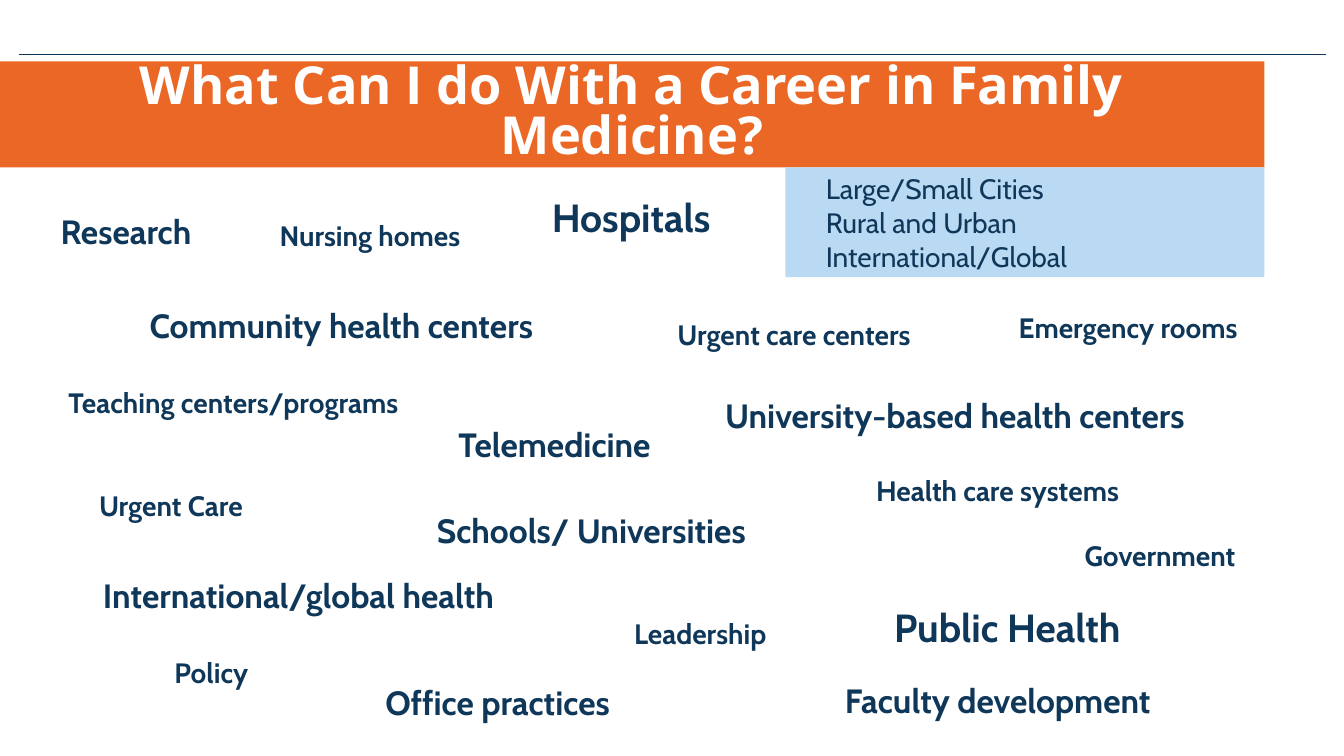
import dataclasses

import pptx
import pptx.dml.color
import pptx.enum.shapes
import pptx.enum.text
import pptx.oxml.xmlchemy
import pptx.slide
import pptx.util
from lxml import etree

PX = 9144
COLORS = {"navy": "0F3759", "orange": "EA6725", "sky": "BAD9F3", "white": "FFFFFF"}
ALIGN = pptx.enum.text.PP_ALIGN
DRAWING_NS = "http://schemas.openxmlformats.org/drawingml/2006/main"


@dataclasses.dataclass
class Label:
    text: str
    left: int
    top: int
    width: int
    height: int
    size: int
    spacing: float = 1.0


@dataclasses.dataclass
class Panel:
    text: str
    left: int
    top: int
    width: int
    height: int
    fill: str
    font: str
    size: float
    color: str
    bold: bool
    align: ALIGN
    spacing: float
    inset: int


LABELS = [
    Label("Community health centers", 103, 294, 471, 52, 24, 1.1),
    Label("Urgent care centers", 628, 307, 319, 45, 20, 1.1),
    Label("University-based health centers", 675, 383, 544, 52, 24, 1.1),
    Label("Faculty development", 787, 670, 405, 50, 24),
    Label("Public Health", 828, 589, 342, 61, 28, 1.1),
    Label("Nursing homes", 244, 209, 246, 45, 20, 1.1),
    Label("Policy", 37, 645, 345, 44, 20),
    Label("Office practices", 320, 672, 347, 50, 24),
    Label("Urgent Care", 40, 476, 259, 45, 20, 1.1),
    Label("Government", 969, 529, 363, 44, 20),
    Label("International/global health", 49, 565, 494, 50, 24),
    Label("Telemedicine", 405, 416, 290, 50, 24),
    Label("Emergency rooms", 969, 303, 300, 44, 20),
    Label("Research", 37, 204, 176, 50, 24),
    Label("Schools/ Universities", 405, 501, 363, 50, 24),
    Label("Health care systems", 833, 465, 313, 44, 20),
    Label("Teaching centers/programs", 19, 378, 425, 44, 20),
    Label("Leadership", 587, 607, 215, 44, 20),
    Label("Hospitals", 476, 187, 300, 57, 28),
]

PANELS = [
    Panel("What Can I do With a Career in Family Medicine?", 0, 61, 1254, 105,
          "orange", "Open Sans", 37.4, "white", True, ALIGN.CENTER, 0.8, 10),
    Panel("Large/Small Cities\nRural and Urban\nInternational/Global", 779, 166, 475, 109,
          "sky", "Cabin", 20, "navy", False, ALIGN.LEFT, 1.0, 40),
]


def rgb(name: str) -> pptx.dml.color.RGBColor:
    return pptx.dml.color.RGBColor.from_string(COLORS[name])


def write(tf: pptx.text.text.TextFrame, text: str, font: str, size: float,
          color: str, bold: bool, align: ALIGN, spacing: float) -> None:
    tf.text = text
    tf.word_wrap = True
    for p in tf.paragraphs:
        p.alignment = align
        p.line_spacing = spacing
        for r in p.runs:
            r.font.name = font
            r.font.size = pptx.util.Pt(size)
            r.font.bold = bold
            r.font.color.rgb = rgb(color)


def add_label(s: pptx.slide.Slide, label: Label) -> None:
    sp = s.shapes.add_textbox(label.left * PX, label.top * PX,
                              label.width * PX, label.height * PX)
    tf = sp.text_frame
    write(tf, label.text, "Cabin", label.size, "navy", True, ALIGN.CENTER, label.spacing)
    tf.auto_size = pptx.enum.text.MSO_AUTO_SIZE.SHAPE_TO_FIT_TEXT


def add_panel(s: pptx.slide.Slide, panel: Panel) -> None:
    sp = s.shapes.add_shape(pptx.enum.shapes.MSO_SHAPE.RECTANGLE, panel.left * PX,
                            panel.top * PX, panel.width * PX, panel.height * PX)
    sp.shadow.inherit = False
    sp.fill.solid()
    sp.fill.fore_color.rgb = rgb(panel.fill)
    sp.line.fill.background()
    tf = sp.text_frame
    write(tf, panel.text, panel.font, panel.size, panel.color, panel.bold,
          panel.align, panel.spacing)
    tf.margin_left = panel.inset * PX
    tf.vertical_anchor = pptx.enum.text.MSO_ANCHOR.MIDDLE


def add_rule(s: pptx.slide.Slide, left: int, right: int, y: int) -> None:
    line = s.shapes.add_connector(pptx.enum.shapes.MSO_CONNECTOR.STRAIGHT,
                                  left * PX, y * PX, right * PX, y * PX)
    line.line.color.rgb = rgb("navy")
    line.line.width = pptx.util.Pt(0.5)
    etree.SubElement(line._element.spPr, f"{{{DRAWING_NS}}}effectLst")


def main() -> None:
    prs = pptx.Presentation()
    prs.slide_width = 1333 * PX
    prs.slide_height = 750 * PX
    s = prs.slides.add_slide(prs.slide_layouts[6])
    add_rule(s, 19, 1315, 54)
    for label in LABELS:
        add_label(s, label)
    for panel in PANELS:
        add_panel(s, panel)
    prs.save("out.pptx")


if __name__ == "__main__":
    main()
